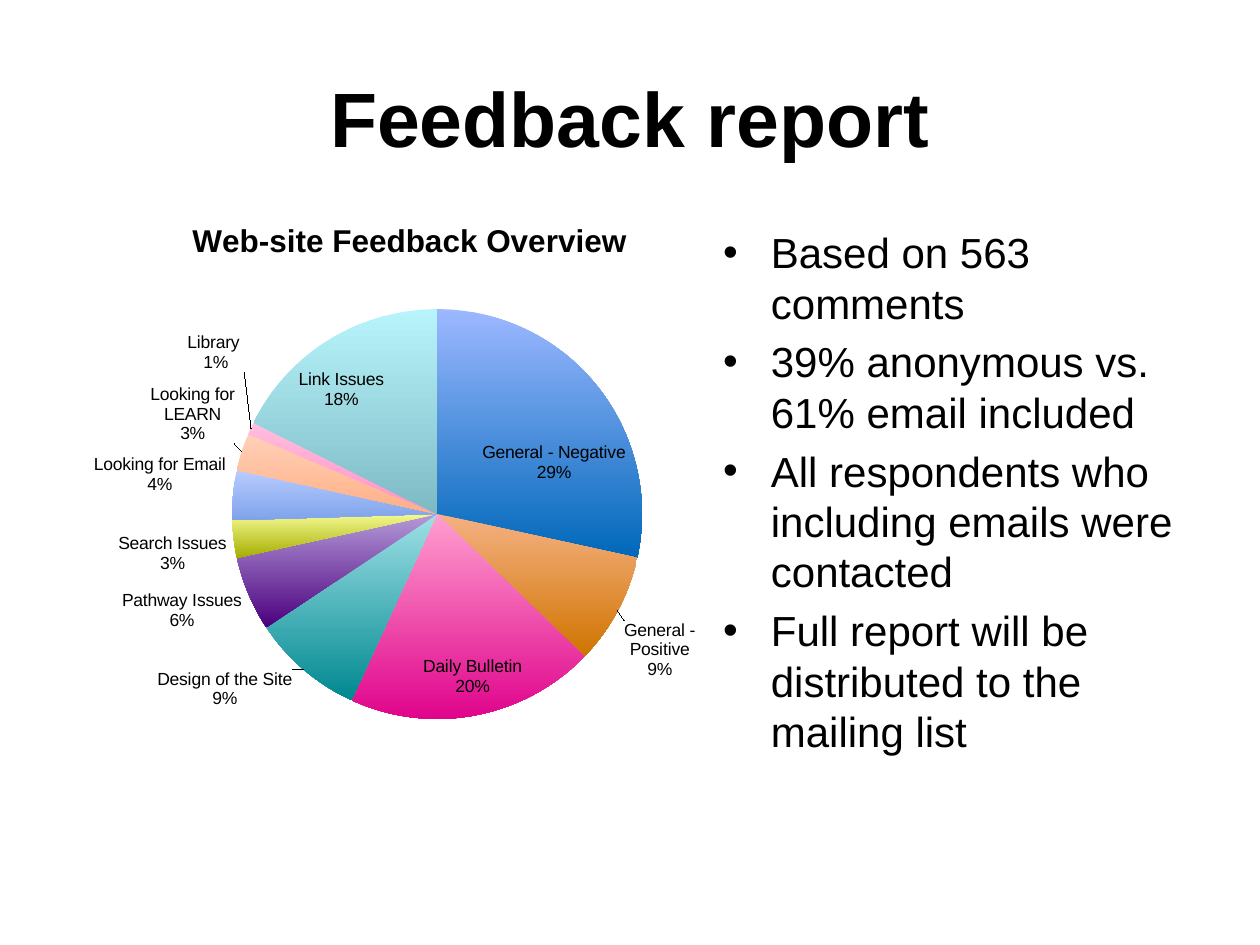
from lxml.etree import SubElement
from pptx import Presentation
from pptx.chart.data import CategoryChartData
from pptx.dml.color import RGBColor
from pptx.enum.chart import XL_CHART_TYPE, XL_LABEL_POSITION
from pptx.enum.text import MSO_ANCHOR, PP_ALIGN
from pptx.oxml import parse_xml
from pptx.oxml.ns import nsdecls, qn
from pptx.util import Inches, Pt

# Content
HEADING = "Feedback report"
FINDINGS = [
    "Based on 563 comments",
    "39% anonymous vs. 61% email included",
    "All respondents who including emails were contacted",
    "Full report will be distributed to the mailing list",
]
CHART_TITLE = "Web-site Feedback Overview"
INSIDE, OUTSIDE = XL_LABEL_POSITION.INSIDE_END, XL_LABEL_POSITION.OUTSIDE_END
# Topic, percent, slice colour, label position, label shift as a share of the chart
TOPICS = [
    ("General - Negative", 29, "blue", INSIDE, (0.05, 0.09)),
    ("General - Positive", 9, "orange", OUTSIDE, (0, 0.01)),
    ("Daily Bulletin", 20, "pink", INSIDE, (0.07, -0.02)),
    ("Design of the Site", 9, "teal", OUTSIDE, (-0.01, -0.01)),
    ("Pathway Issues", 6, "purple", OUTSIDE, (0, -0.01)),
    ("Search Issues", 3, "lime", OUTSIDE, (0, -0.01)),
    ("Looking for Email", 4, "pale blue", OUTSIDE, (0, 0)),
    ("Looking for LEARN", 3, "pale orange", OUTSIDE, (0, -0.01)),
    ("Library ", 1, "pale pink", OUTSIDE, (0, -0.09)),
    ("Link Issues", 18, "pale teal", INSIDE, (-0.05, 0.04)),
]
NARROW_LABELS = ("Design of the Site", "Looking for Email")

FONT = "Arial"
COLORS = {"text": "000000"}
# Top and bottom colour of each slice
GRADIENTS = {
    "blue": ("9CB8FF", "0068BA"),
    "orange": ("F5B183", "D07400"),
    "pink": ("FF9FCF", "E0048C"),
    "teal": ("9FE0E6", "008890"),
    "purple": ("B49AD8", "4B007E"),
    "lime": ("F4FA90", "A5AD00"),
    "pale blue": ("B8CCFF", "7FA3EA"),
    "pale orange": ("FFD0B8", "FFAF85"),
    "pale pink": ("FFBEDD", "FF92C8"),
    "pale teal": ("B8F4FB", "7DBAC4"),
}
LABEL_EXT = "{CE6537A1-D6FC-4f65-9D91-7224C49458BB}"
CHART_2012 = "http://schemas.microsoft.com/office/drawing/2012/chart"


def style_font(font, size, bold=False):
    font.name = FONT
    font.size = Pt(size)
    font.bold = bold
    font.color.rgb = RGBColor.from_string(COLORS["text"])


def manual_layout(**settings):
    tags = "".join(f'<c:{tag} val="{value}"/>' for tag, value in settings.items())
    return parse_xml(f'<c:layout {nsdecls("c")}><c:manualLayout>{tags}</c:manualLayout></c:layout>')


def limit_label_size(label, width, height):
    extension = SubElement(SubElement(label, qn("c:extLst")), qn("c:ext"), uri=LABEL_EXT)
    size = SubElement(extension, f"{{{CHART_2012}}}layout", nsmap={"c15": CHART_2012})
    size.append(manual_layout(w=width, h=height)[0])


def add_text(slide, left, top, width, height):
    frame = slide.shapes.add_textbox(*map(Inches, (left, top, width, height))).text_frame
    frame.word_wrap = True
    return frame


def add_heading(slide):
    frame = add_text(slide, 0.5, 0.3, 9, 1.25)
    frame.vertical_anchor = MSO_ANCHOR.MIDDLE
    frame.text = HEADING
    heading = frame.paragraphs[0]
    heading.alignment = PP_ALIGN.CENTER
    style_font(heading.runs[0].font, 44, bold=True)


def add_findings(slide):
    frame = add_text(slide, 5.64, 1.75, 3.86, 4.46)
    frame.text = "\n".join(FINDINGS)
    for number, finding in enumerate(frame.paragraphs):
        finding.space_before = Pt(4.8 if number else 0)
        properties = finding._p.get_or_add_pPr()
        properties.set("marL", str(Inches(0.38)))
        properties.set("indent", str(-Inches(0.38)))
        SubElement(properties, qn("a:buFont"), typeface=FONT)
        SubElement(properties, qn("a:buChar"), char="•")
        style_font(finding.runs[0].font, 24)


def add_feedback_pie(slide):
    feedback = CategoryChartData(number_format='0"%"')
    feedback.categories = [topic for topic, *_ in TOPICS]
    feedback.add_series("Series 1", [percent for _, percent, *_ in TOPICS])
    chart = slide.shapes.add_chart(
        XL_CHART_TYPE.PIE, *map(Inches, (0.5, 1.55, 5.5, 4.66)), feedback).chart
    chart.has_legend = False
    style_font(chart.font, 10)

    # Title and plot area
    chart.has_title = True
    title = chart.chart_title
    title.text_frame.text = CHART_TITLE
    style_font(title.text_frame.paragraphs[0].runs[0].font, 18, bold=True)
    title.element.find(qn("c:tx")).addnext(
        manual_layout(xMode="edge", yMode="edge", x=0.18, y=0.03))
    plot_area = chart.element.find(f".//{qn('c:plotArea')}")
    for layout in plot_area.findall(qn("c:layout")):
        plot_area.remove(layout)
    plot_area.insert(0, manual_layout(
        layoutTarget="inner", xMode="edge", yMode="edge", x=0.244, y=0.194, w=0.592, h=0.698))

    # Slices and their labels
    plot = chart.plots[0]
    plot.vary_by_categories = True
    series = plot.series[0]
    for number, (_, _, color, position, _) in enumerate(TOPICS):
        point = series.points[number]
        point.format.line.fill.background()
        fill = point.format.fill
        fill.gradient()
        fill.gradient_angle = 270
        for stop, shade, place in zip(fill.gradient_stops, GRADIENTS[color], (0, 1)):
            stop.color.rgb = RGBColor.from_string(shade)
            stop.position = place
        style_font(point.data_label.font, 10)
        point.data_label.position = position

    # Topic above percent, shifted clear of its neighbours
    labels = chart.element.iter(qn("c:dLbl"))
    for label, (topic, *_, (across, down)) in zip(labels, TOPICS):
        label.find(qn("c:showCatName")).set("val", "1")
        SubElement(label, qn("c:separator")).text = "\n"
        if across or down:
            label.find(qn("c:idx")).addnext(manual_layout(x=across, y=down))
        if topic in NARROW_LABELS:
            limit_label_size(label, 0.17, 0.11)
    for leader in chart.element.iter(qn("c:showLeaderLines")):
        leader.set("val", "1")


def main():
    deck = Presentation()
    deck.slide_width, deck.slide_height = Inches(10), Inches(7.5)
    slide = deck.slides.add_slide(deck.slide_layouts[6])
    add_heading(slide)
    add_findings(slide)
    add_feedback_pie(slide)
    deck.save("out.pptx")


if __name__ == "__main__":
    main()
